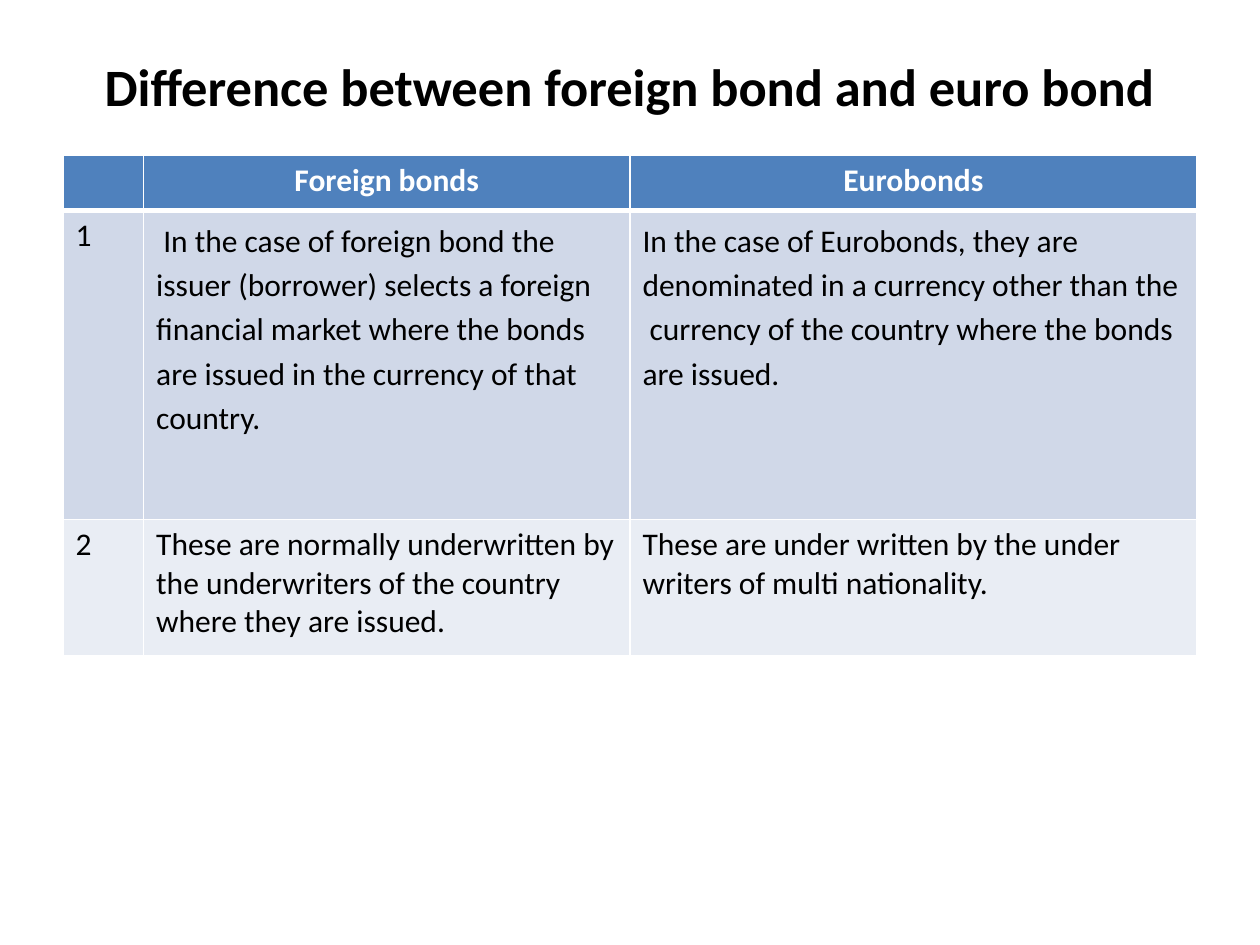
from lxml import etree
from pptx import Presentation
from pptx.dml.color import RGBColor
from pptx.enum.text import MSO_ANCHOR, PP_ALIGN
from pptx.oxml.ns import qn
from pptx.util import Inches, Pt

LEFT = PP_ALIGN.LEFT
CENTER = PP_ALIGN.CENTER
MIDDLE = MSO_ANCHOR.MIDDLE

BLACK = RGBColor(0x00, 0x00, 0x00)
WHITE = RGBColor(0xFF, 0xFF, 0xFF)
HEADER_BLUE = RGBColor(0x4F, 0x81, 0xBD)
BAND_COLORS = [RGBColor(0xD0, 0xD8, 0xE8), RGBColor(0xE9, 0xED, 0xF4)]

FONT = "Calibri"
SLIDE_WIDTH, SLIDE_HEIGHT = Inches(10), Inches(7.5)
MARGIN = 0.05 * SLIDE_WIDTH
CONTENT_WIDTH = SLIDE_WIDTH - 2 * MARGIN
TITLE_BOX = (MARGIN, 0.04 * SLIDE_HEIGHT, CONTENT_WIDTH, 0.1 * SLIDE_HEIGHT)
TABLE_BOX = (MARGIN, 0.164 * SLIDE_HEIGHT, CONTENT_WIDTH, 0.53 * SLIDE_HEIGHT)
COLUMN_WEIGHTS = [0.64, 3.86, 4.5]
ROW_WEIGHTS = [0.44, 2.45, 1.08]

TITLE = "Difference between foreign bond and euro bond"
ROWS = [
    ["", "Foreign bonds", "Eurobonds"],
    [
        "1",
        " In the case of foreign bond the issuer (borrower) selects a foreign "
        "financial market where the bonds are issued in the currency of that country.",
        "In the case of Eurobonds, they are denominated in a currency other than the "
        " currency of the country where the bonds are issued.",
    ],
    [
        "2",
        "These are normally underwritten by the underwriters of the country "
        "where they are issued.",
        "These are under written by the under writers of multi nationality.",
    ],
]


def write_text(frame, text, size=18, color=BLACK, bold=False, align=LEFT,
               line_spacing=None, space_after=None):
    frame.word_wrap = True
    paragraph = frame.paragraphs[0]
    paragraph.alignment = align
    paragraph.line_spacing = line_spacing
    paragraph.space_after = space_after
    paragraph.font.size = Pt(size)
    if text:
        run = paragraph.add_run()
        run.text = text
        run.font.name = FONT
        run.font.size = Pt(size)
        run.font.bold = bold
        run.font.color.rgb = color


def set_borders(cell, color, **widths):
    properties = cell._tc.get_or_add_tcPr()
    for index, side in enumerate("LRTB"):
        line = etree.Element(qn(f"a:ln{side}"), w=str(Pt(widths.get(side, 1))))
        fill = etree.SubElement(line, qn("a:solidFill"))
        etree.SubElement(fill, qn("a:srgbClr"), val=str(color))
        properties.insert(index, line)


def add_title(slide, box):
    shape = slide.shapes.add_textbox(*map(round, box))
    write_text(shape.text_frame, TITLE, size=30, bold=True, align=CENTER)
    shape.text_frame.vertical_anchor = MIDDLE


def set_lengths(tracks, attribute, weights, total):
    for track, weight in zip(tracks, weights):
        setattr(track, attribute, round(total * weight / sum(weights)))


def add_comparison_table(slide, box):
    shape = slide.shapes.add_table(len(ROWS), len(ROWS[0]), *map(round, box))
    table = shape.table
    set_lengths(table.columns, "width", COLUMN_WEIGHTS, box[2])
    set_lengths(table.rows, "height", ROW_WEIGHTS, box[3])
    for row, texts in enumerate(ROWS):
        for column, text in enumerate(texts):
            cell = table.cell(row, column)
            cell.fill.solid()
            if row == 0:
                cell.fill.fore_color.rgb = HEADER_BLUE
                text_format = dict(color=WHITE, bold=True, align=CENTER)
            else:
                cell.fill.fore_color.rgb = BAND_COLORS[row - 1]
                text_format = {}
            if row == 1 and column > 0:
                text_format = dict(line_spacing=1.15, space_after=Pt(10))
            write_text(cell.text_frame, text, **text_format)
            set_borders(cell, WHITE, T=3 if row == 1 else 1, B=3 if row == 0 else 1)


def main():
    presentation = Presentation()
    presentation.slide_width = SLIDE_WIDTH
    presentation.slide_height = SLIDE_HEIGHT
    slide = presentation.slides.add_slide(presentation.slide_layouts[6])
    add_title(slide, TITLE_BOX)
    add_comparison_table(slide, TABLE_BOX)
    presentation.save("out.pptx")


if __name__ == "__main__":
    main()
